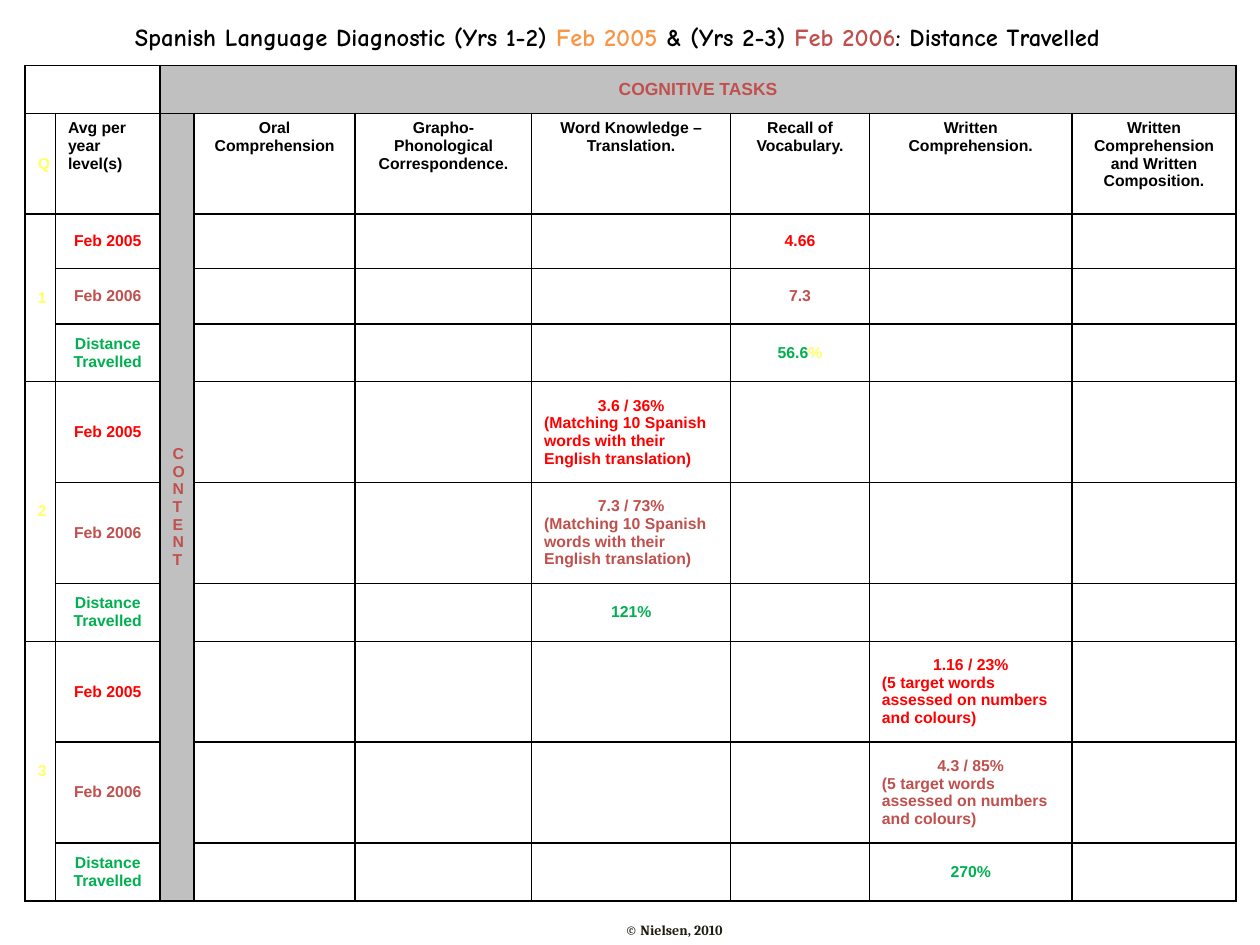
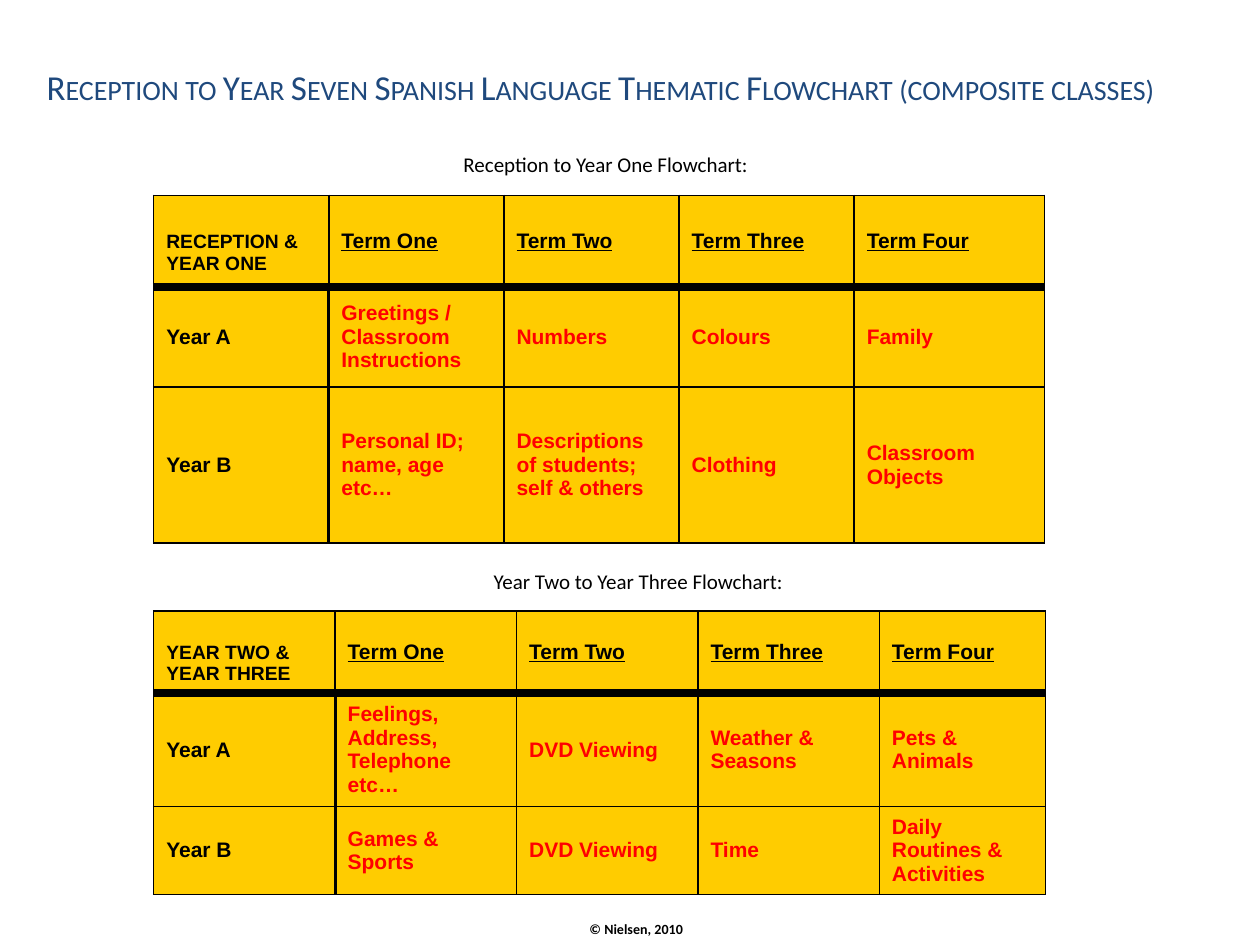
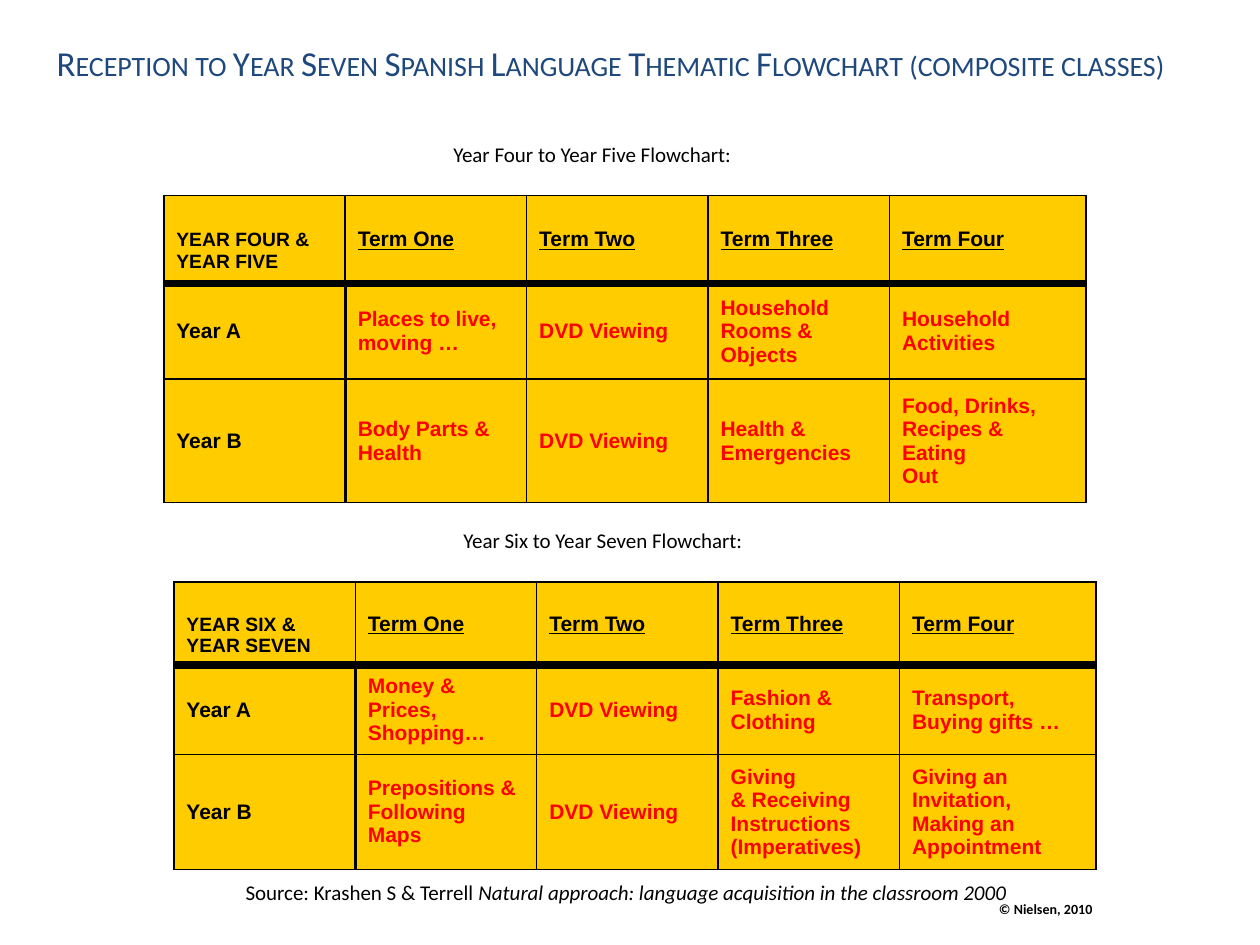
from lxml import etree
from pptx import Presentation
from pptx.dml.color import RGBColor
from pptx.enum.text import MSO_ANCHOR, MSO_AUTO_SIZE, PP_ALIGN
from pptx.oxml.ns import qn
from pptx.util import Inches, Pt

BLACK = RGBColor(0x00, 0x00, 0x00)
RED = RGBColor(0xFF, 0x00, 0x00)
BRICK = RGBColor(0xC0, 0x50, 0x4D)
GREEN = RGBColor(0x00, 0xB0, 0x50)
YELLOW = RGBColor(0xFF, 0xFF, 0x66)
ORANGE = RGBColor(0xF7, 0x96, 0x46)
NAVY = RGBColor(0x1F, 0x49, 0x7D)
INK = RGBColor(0x1E, 0x1C, 0x11)
GREY = RGBColor(0xC0, 0xC0, 0xC0)
GOLD = RGBColor(0xFF, 0xCC, 0x00)

LEFT, CENTER = PP_ALIGN.LEFT, PP_ALIGN.CENTER
TOP, MIDDLE = MSO_ANCHOR.TOP, MSO_ANCHOR.MIDDLE

COPYRIGHT = "© Nielsen, 2010"
FLOW_TITLE = "Reception to Year Seven Spanish Language Thematic Flowchart (composite classes)"
TERMS = ["Term One", "Term Two", "Term Three", "Term Four"]

DIAGNOSTIC_TITLE = [
    ("Spanish Language Diagnostic (Yrs 1-2) ", BLACK), ("Feb 2005 ", ORANGE),
    ("& (Yrs 2-3) ", BLACK), ("Feb 2006", BRICK), (": Distance Travelled ", BLACK),
]
TASKS = [
    "Oral Comprehension", "Grapho-Phonological Correspondence.",
    "Word Knowledge – Translation.", "Recall of Vocabulary.",
    "Written Comprehension.", "Written Comprehension and Written Composition.",
]
MEASURES = [("Feb 2005", RED), ("Feb 2006", BRICK), ("Distance Travelled", GREEN)]
MATCHING = "(Matching 10 Spanish words with their English translation)"
TARGETS = "(5 target words assessed on numbers and colours)"
# For each question: index of the task tested, then one result per measure
QUESTIONS = [
    (3, ["4.66", "7.3", [("56.6", GREEN), ("%", YELLOW)]]),
    (2, [f"3.6 / 36%\n{MATCHING}", f"7.3 / 73%\n{MATCHING}", "121%"]),
    (4, [f"1.16 / 23%\n{TARGETS}", f"4.3 / 85%\n{TARGETS}", "270%"]),
]
DIAGNOSTIC_COLS = [0.24, 0.83, 0.27, 1.28, 1.4, 1.58, 1.1, 1.61, 1.3]
DIAGNOSTIC_ROWS = [0.38, 0.8, 0.43, 0.44, 0.46] + [0.8, 0.8, 0.46] * 2

FLOW_SLIDES = [
    dict(
        title_at=(0.27, 0.47, 9.29, 0.44), copyright_at=(4.14, 7.26, 1.43, 0.24),
        charts=[
            dict(caption="Reception to Year One Flowchart:", caption_at=(3.58, 1.15, 2.71, 0.3),
                 at=(1.22, 1.55), cols=[1.39] * 4 + [1.51], rows=[0.73, 0.79, 1.24],
                 group="RECEPTION &\nYEAR ONE",
                 year_a=["Greetings /\nClassroom\nInstructions", "Numbers", "Colours", "Family"],
                 year_b=["Personal ID;\nname, age etc…", "Descriptions of students; self & others",
                         "Clothing", "Classroom\nObjects"]),
            dict(caption="Year Two to Year Three Flowchart:", caption_at=(3.82, 4.46, 2.79, 0.3),
                 at=(1.22, 4.85), cols=[1.44] * 4 + [1.32], rows=[0.65, 0.9, 0.7],
                 group="YEAR TWO &\nYEAR THREE",
                 year_a=["Feelings,\nAddress,\nTelephone etc…", "DVD Viewing",
                         "Weather &\nSeasons", "Pets & Animals"],
                 year_b=["Games & Sports", "DVD Viewing", "Time",
                         "Daily Routines &\nActivities"]),
        ]),
    dict(
        title_at=(0.35, 0.28, 9.21, 0.44), copyright_at=(7.39, 7.1, 1.43, 0.24),
        charts=[
            dict(caption="Year Four to Year Five Flowchart:", caption_at=(3.5, 1.07, 2.7, 0.3),
                 at=(1.3, 1.55), cols=[1.44] * 4 + [1.56], rows=[0.7, 0.76, 0.98],
                 group="YEAR FOUR &\nYEAR FIVE",
                 year_a=["Places to live,\nmoving …", "DVD Viewing",
                         "Household\nRooms &\nObjects", "Household\nActivities"],
                 year_b=["Body Parts &\nHealth", "DVD Viewing", "Health &\nEmergencies",
                         "Food, Drinks,\nRecipes & Eating\nOut"]),
            dict(caption="Year Six to Year Seven Flowchart:", caption_at=(3.58, 4.14, 2.74, 0.3),
                 at=(1.38, 4.62), cols=[1.44] * 4 + [1.56], rows=[0.66, 0.71, 0.91],
                 group="YEAR SIX &\nYEAR SEVEN",
                 year_a=["Money & Prices,\nShopping…", "DVD Viewing",
                         "Fashion &\nClothing", "Transport,\nBuying gifts …"],
                 year_b=["Prepositions &\nFollowing Maps", "DVD Viewing",
                         "Giving\n& Receiving\nInstructions\n(Imperatives)",
                         "Giving an\nInvitation,\nMaking an\nAppointment"]),
        ]),
]


def write(tf, content, size, color=BLACK, name="Arial", bold=False, align=LEFT, underline=False):
    """Fill a frame from a string (one paragraph a line) or a list of (text, colour) runs."""
    if isinstance(content, str):
        lines = [[(line, color)] for line in content.split("\n")]
    else:
        lines = [content]
    for i, line in enumerate(lines):
        p = tf.add_paragraph() if i else tf.paragraphs[0]
        p.alignment = align
        for string, run_color in line:
            r = p.add_run()
            r.text = string
            r.font.size, r.font.name = Pt(size), name
            r.font.bold, r.font.underline = bold, underline
            r.font.color.rgb = run_color


def place(sp, box):
    sp.left, sp.top, sp.width, sp.height = (Inches(v) for v in box)


def add_title(s, box, content, wrap=True, **style):
    sp = s.shapes.title
    place(sp, box)
    tf = sp.text_frame
    tf.word_wrap, tf.auto_size, tf.vertical_anchor = wrap, MSO_AUTO_SIZE.NONE, MIDDLE
    write(tf, content, **style)
    return tf


def add_text(s, box, content, anchor=TOP, **style):
    tf = s.shapes.add_textbox(*(Inches(v) for v in box)).text_frame
    tf.word_wrap, tf.vertical_anchor = True, anchor
    write(tf, content, **style)
    return tf


def add_copyright(s, box, name="Calibri", color=BLACK):
    tf = add_text(s, box, COPYRIGHT, size=8, name=name, color=color, bold=True, align=CENTER)
    return tf.paragraphs[0]


def add_grid(s, at, cols, rows):
    frame = s.shapes.add_table(len(rows), len(cols), Inches(at[0]), Inches(at[1]),
                               Inches(sum(cols)), Inches(sum(rows)))
    table = frame.table
    table.first_row = table.horz_banding = False
    for column, width in zip(table.columns, cols):
        column.width = Inches(width)
    for row, height in zip(table.rows, rows):
        row.height = Inches(height)
    return table


def format_cell(cell, fill=None, left=1, right=1, top=1, bottom=1):
    """Draw the four borders (widths in points), then the fill."""
    tcPr = cell._tc.get_or_add_tcPr()
    for side, width in zip("LRTB", (left, right, top, bottom)):
        ln = etree.SubElement(tcPr, qn(f"a:ln{side}"), w=str(Pt(width)))
        solid = etree.SubElement(ln, qn("a:solidFill"))
        etree.SubElement(solid, qn("a:srgbClr"), val=str(BLACK))
    if fill is None:
        cell.fill.background()
    else:
        cell.fill.solid()
        cell.fill.fore_color.rgb = fill


def write_cell(cell, content, anchor=MIDDLE, **style):
    cell.vertical_anchor = anchor
    write(cell.text_frame, content, bold=True, **style)


def add_diagnostic(s):
    table = add_grid(s, (0.2, 0.52), DIAGNOSTIC_COLS, DIAGNOSTIC_ROWS)
    last_row, last_col = len(DIAGNOSTIC_ROWS) - 1, len(DIAGNOSTIC_COLS) - 1
    for r in range(last_row + 1):
        for c in range(last_col + 1):
            in_band = c == 2 or (r == 0 and c > 2)
            format_cell(table.cell(r, c), GREY if in_band else None)

    table.cell(0, 0).merge(table.cell(0, 1))
    table.cell(0, 2).merge(table.cell(0, last_col))
    table.cell(1, 2).merge(table.cell(last_row, 2))
    write_cell(table.cell(0, 2), "COGNITIVE TASKS", size=10, color=BRICK, align=CENTER)
    write_cell(table.cell(1, 2), "\n".join("CONTENT"), size=9, color=BRICK, align=CENTER)
    write_cell(table.cell(1, 0), "Q", size=9, color=YELLOW, align=CENTER)
    write_cell(table.cell(1, 1), "Avg per year level(s)", TOP, size=9)
    for c, task in enumerate(TASKS, 3):
        write_cell(table.cell(1, c), task, TOP, size=9, align=CENTER)

    for q, (task, results) in enumerate(QUESTIONS):
        first = 2 + q * len(MEASURES)
        table.cell(first, 0).merge(table.cell(first + len(MEASURES) - 1, 0))
        write_cell(table.cell(first, 0), str(q + 1), size=9, color=YELLOW, align=CENTER)
        for r, ((measure, color), result) in enumerate(zip(MEASURES, results), first):
            write_cell(table.cell(r, 1), measure, size=9, color=color, align=CENTER)
            cell = table.cell(r, 3 + task)
            write_cell(cell, result, size=9, color=color, align=CENTER)
            for p in cell.text_frame.paragraphs[1:]:
                p.alignment = LEFT

    for cell in table.iter_cells():
        if not cell.text_frame.text:
            cell.margin_top = cell.margin_bottom = 0


def add_flowchart(s, chart):
    add_text(s, chart["caption_at"], chart["caption"], MIDDLE, size=12, name="Calibri")
    table = add_grid(s, chart["at"], chart["cols"], chart["rows"])
    rows = [[chart["group"]] + TERMS, ["Year A"] + chart["year_a"], ["Year B"] + chart["year_b"]]
    for r, row in enumerate(rows):
        for c, content in enumerate(row):
            cell = table.cell(r, c)
            format_cell(cell, GOLD,
                        left=2 if r and c == 1 else 1, right=2 if r and c == 0 else 1,
                        top=5 if r == 1 else 1, bottom=5 if r == 0 else 1)
            write_cell(cell, content, size=12 if r or c else 11,
                       color=RED if r and c else BLACK, underline=r == 0 and c > 0)
    table.cell(0, 0).margin_top = Inches(0.23)


def main():
    prs = Presentation()
    prs.slide_width, prs.slide_height = Inches(10), Inches(7.5)
    title_only = prs.slide_layouts[5]

    s = prs.slides.add_slide(title_only)
    add_title(s, (0.44, 0.13, 8.99, 0.33), DIAGNOSTIC_TITLE, wrap=False,
              size=14, name="Comic Neue", bold=True, align=CENTER)
    add_diagnostic(s)
    p = add_copyright(s, (4.84, 7.28, 1.02, 0.22), "Cambria", INK)
    p.line_spacing, p.space_before = 0.9, Pt(1.6)

    for flow in FLOW_SLIDES:
        s = prs.slides.add_slide(title_only)
        tf = add_title(s, flow["title_at"], FLOW_TITLE, size=20, name="Calibri", color=NAVY)
        tf.paragraphs[0].runs[0].font._element.set("cap", "small")
        for chart in flow["charts"]:
            add_flowchart(s, chart)
        p = add_copyright(s, flow["copyright_at"])
        p._p.get_or_add_pPr().set("marL", str(Inches(0.39)))

    tf = add_text(s, (1.85, 6.93, 6.38, 0.5),
                  [("Source: Krashen S & Terrell ", BLACK),
                   ("Natural approach: language acquisition in the classroom 2000", BLACK)],
                  size=12, name="Calibri")
    tf.paragraphs[0].runs[1].font.italic = True
    prs.save("out.pptx")


if __name__ == "__main__":
    main()
